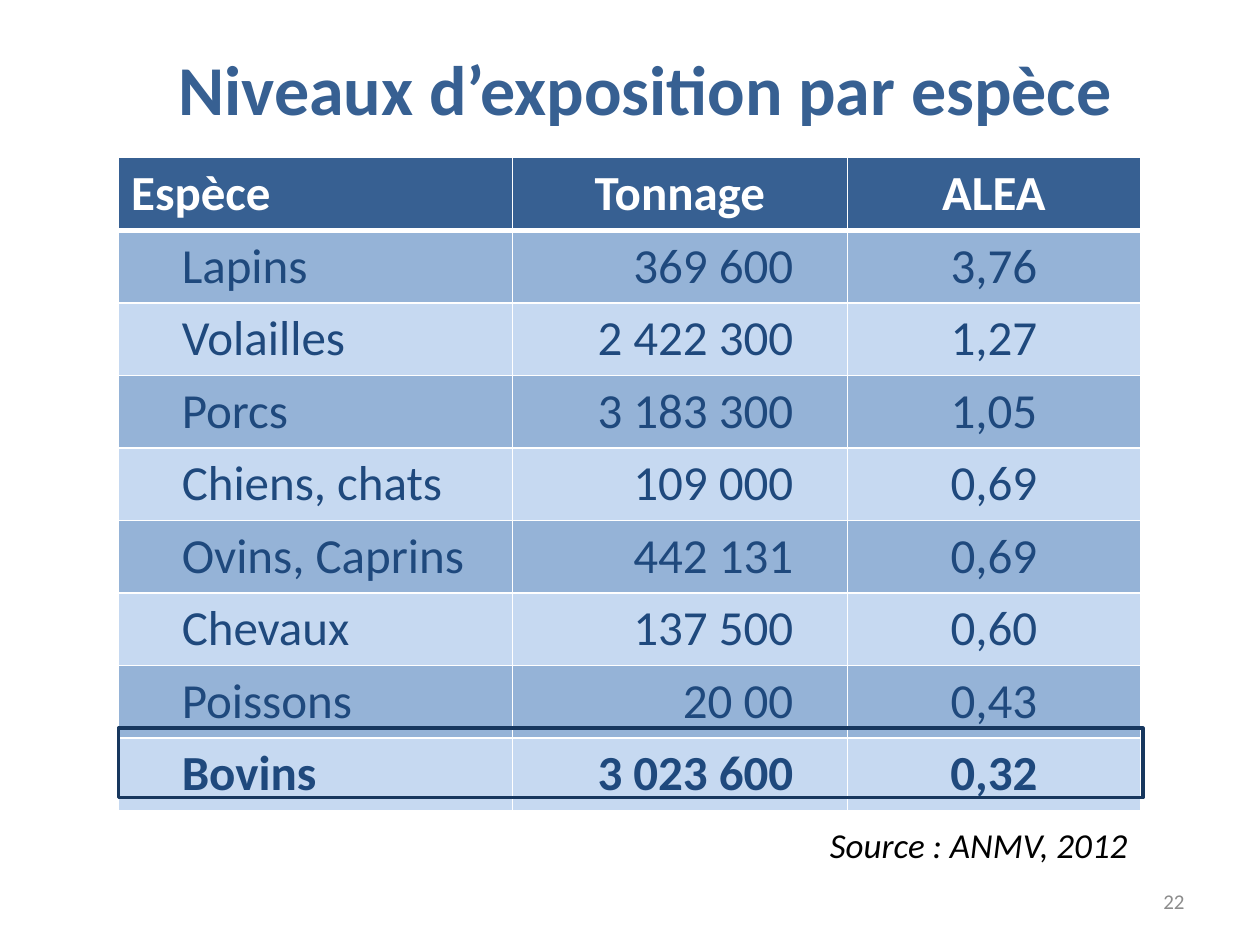
from dataclasses import dataclass

from lxml import etree
from pptx import Presentation
from pptx import util as u
from pptx.dml.color import RGBColor
from pptx.enum import shapes, text
from pptx.oxml.ns import qn

HUES = {
    "head": "376092", "odd": "95B3D7", "even": "C6D9F1", "ink": "1F497D",
    "frame": "17375E", "rule": "FFFFFF", "black": "000000", "page": "8C8C8C",
}
ALIGN = text.PP_ALIGN


@dataclass(frozen=True)
class Column:
    name: str
    width: float
    head: ALIGN
    body: ALIGN
    indent: float = 0
    right: float = 0.25


@dataclass(frozen=True)
class Species:
    name: str
    tonnage: str
    alea: str
    bold: bool = False


@dataclass(frozen=True)
class Note:
    words: str
    box: tuple
    align: ALIGN
    anchor: text.MSO_ANCHOR
    wrap: bool
    font: dict


COLUMNS = [
    Column("Espèce", 7.94, ALIGN.LEFT, ALIGN.LEFT, indent=1.02),
    Column("Tonnage", 6.75, ALIGN.CENTER, ALIGN.RIGHT, right=1.09),
    Column("ALEA", 5.91, ALIGN.CENTER, ALIGN.CENTER),
]
SPECIES = [
    Species("Lapins", "369 600", "3,76"),
    Species("Volailles", "2 422 300", "1,27"),
    Species("Porcs", "3 183 300", "1,05"),
    Species("Chiens, chats", "109 000", "0,69"),
    Species("Ovins, Caprins", "442 131", "0,69"),
    Species("Chevaux", "137 500", "0,60"),
    Species("Poissons", "20 00", "0,43"),
    Species("Bovins", "3 023 600", "0,32", bold=True),
]
NOTES = [
    Note("Source : ANMV, 2012", (16.48, 16.48, 6.55, 1.12), ALIGN.LEFT,
         text.MSO_ANCHOR.TOP, False,
         {"size": u.Pt(20), "italic": True, "hue": "black"}),
    Note("22", (18.2, 17.65, 5.93, 1.02), ALIGN.RIGHT,
         text.MSO_ANCHOR.MIDDLE, True, {"size": u.Pt(12), "hue": "page"}),
]
LEFT, TOP, ROW = 2.39, 3.18, 1.32


def color(hue: str) -> RGBColor:
    return RGBColor.from_string(HUES[hue])


def write(frame, words: str, align: ALIGN, hue: str, **font):
    """Fill the first paragraph with one formatted run and return it."""
    para = frame.paragraphs[0]
    para.alignment = align
    run = para.add_run()
    run.text = words
    for key, value in {"name": "Calibri", **font}.items():
        setattr(run.font, key, value)
    run.font.color.rgb = color(hue)
    return para


def edge(cell, top: int, bottom: int) -> None:
    """Draw the white cell borders; widths are in points."""
    props = cell._tc.get_or_add_tcPr()
    sides = {"a:lnL": 1, "a:lnR": 1, "a:lnT": top, "a:lnB": bottom}
    for spot, (tag, width) in enumerate(sides.items()):
        line = etree.Element(qn(tag), w=str(u.Pt(width)))
        fill = etree.SubElement(line, qn("a:solidFill"))
        etree.SubElement(fill, qn("a:srgbClr"), val=HUES["rule"])
        props.insert(spot, line)


def paint(cell, hue: str) -> None:
    cell.fill.solid()
    cell.fill.fore_color.rgb = color(hue)


def draw_table(slide) -> None:
    count = len(SPECIES) + 1
    width = sum(col.width for col in COLUMNS)
    table = slide.shapes.add_table(
        count, len(COLUMNS), *map(u.Cm, (LEFT, TOP, width, ROW * count))).table
    for row in table.rows:
        row.height = u.Cm(ROW)
    for x, col in enumerate(COLUMNS):
        table.columns[x].width = u.Cm(col.width)
        head = table.cell(0, x)
        paint(head, "head")
        edge(head, 1, 3)
        write(head.text_frame, col.name, col.head, "rule", size=u.Pt(28), bold=True)
        for y, kind in enumerate(SPECIES, 1):
            cell = table.cell(y, x)
            paint(cell, "odd" if y % 2 else "even")
            edge(cell, 3 if y == 1 else 1, 1)
            cell.margin_right = u.Cm(col.right)
            words = (kind.name, kind.tonnage, kind.alea)[x]
            para = write(cell.text_frame, words, col.body, "ink",
                         size=u.Pt(28), bold=kind.bold)
            if col.indent:
                para._p.get_or_add_pPr().set("marL", str(u.Cm(col.indent)))


def draw_note(slide, note: Note) -> None:
    frame = slide.shapes.add_textbox(*map(u.Cm, note.box)).text_frame
    frame.word_wrap = note.wrap
    frame.vertical_anchor = note.anchor
    write(frame, note.words, note.align, **note.font)


def draw_frame(slide) -> None:
    """Outline the Bovins row."""
    box = slide.shapes.add_shape(
        shapes.MSO_SHAPE.RECTANGLE, *map(u.Cm, (LEFT, 14.68, 20.65, 1.4)))
    box.shadow.inherit = False
    box.fill.background()
    box.line.color.rgb = color("frame")
    box.line.width = u.Pt(2)


def main() -> None:
    deck = Presentation()
    deck.slide_width, deck.slide_height = u.Cm(25.4), u.Cm(19.05)
    slide = deck.slides.add_slide(deck.slide_layouts[5])
    title = slide.shapes.title
    spots = {"left": LEFT, "top": 0.58, "width": 21.23, "height": 2.36}
    for key, value in spots.items():
        setattr(title, key, u.Cm(value))
    write(title.text_frame, "Niveaux d’exposition par espèce", ALIGN.CENTER,
          "head", size=u.Pt(40), bold=True)
    draw_table(slide)
    draw_frame(slide)
    for note in NOTES:
        draw_note(slide, note)
    deck.save("out.pptx")


if __name__ == "__main__":
    main()
